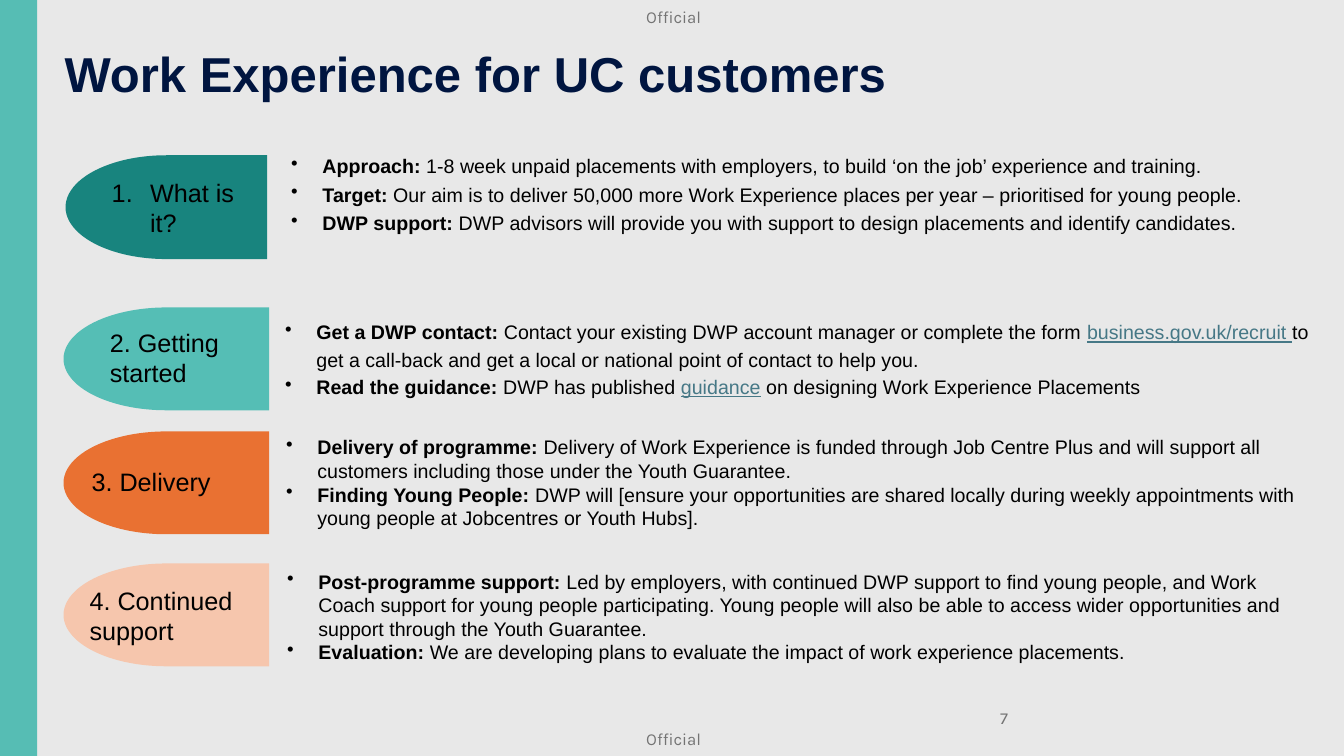
from lxml.etree import SubElement
from pptx import Presentation
from pptx.dml.color import RGBColor
from pptx.enum.shapes import MSO_SHAPE
from pptx.enum.text import MSO_ANCHOR, MSO_AUTO_SIZE, PP_ALIGN
from pptx.oxml.ns import qn
from pptx.util import Inches, Pt

WIDTH, HEIGHT = 13.33, 7.5
TEAL, BLACK, LINK = "56BDB4", "000000", "467886"

TOPICS = [
    {
        "pill": (0.65, 1.54, 2, 1.03), "color": "18847E", "label": "What is it?",
        "label_box": (0.36, 0.17, 1.61, 0.71), "numbered": True,
        "bullet_box": (2.14, -0.06, 10.31, 1.83), "space_before": 3.5,
        "bullets": [
            ("Approach: ", "1-8 week unpaid placements with employers, to build ‘on the job’ "
             "experience and training."),
            ("Target: ", "Our aim is to deliver 50,000 more Work Experience places per year – "
             "prioritised for young people."),
            ("DWP support: ", "DWP advisors will provide you with support to design placements "
             "and identify candidates."),
        ],
    },
    {
        "pill": (0.63, 3.05, 2.04, 1.02), "color": "55BEB5", "label": "2. Getting started",
        "label_box": (0.36, 0.15, 1.61, 0.71),
        "bullet_box": (2.1, 0.04, 10.36, 0.93), "line_spacing": 19.5,
        "bullets": [
            ("Get a DWP contact: ", "Contact your existing DWP account manager or complete the "
             "form |business.gov.uk/recruit |to get a call-back and get a local or national "
             "point of contact to help you."),
            ("Read the guidance: ", "DWP has published |guidance| on designing Work Experience "
             "Placements"),
        ],
    },
    {
        "pill": (0.63, 4.28, 2.04, 1.02), "color": "E97132", "label": "3. Delivery",
        "label_box": (0.18, 0.3, 2, 0.4),
        "bullet_box": (2.11, -0.01, 10.36, 1.04),
        "bullets": [
            ("Delivery of programme: ", "Delivery of Work Experience is funded through Job "
             "Centre Plus and will support all customers including those under the Youth "
             "Guarantee."),
            ("Finding Young People: ", "DWP will [ensure your opportunities are shared locally "
             "during weekly appointments with young people at Jobcentres or Youth Hubs]."),
        ],
    },
    {
        "pill": (0.63, 5.59, 2.04, 1.02), "color": "F6C6AD", "label": "4. Continued support",
        "label_box": (0.16, 0.17, 2, 0.71),
        "bullet_box": (2.12, 0.01, 10.16, 1.04),
        "bullets": [
            ("Post-programme support: ", "Led by employers, with continued DWP support to find "
             "young people, and Work Coach support for young people participating. Young people "
             "will also be able to access wider opportunities and support through the Youth "
             "Guarantee."),
            ("Evaluation: ", "We are developing plans to evaluate the impact of work experience "
             "placements."),
        ],
    },
]


def rgb(color):
    """Turn a hex string into a colour."""
    return RGBColor.from_string(color)


def set_font(font, size, color, name="Arial", bold=False):
    """Format a font."""
    font.size, font.name, font.bold = Pt(size), name, bold
    font.color.rgb = rgb(color)


def add_bullet(paragraph, indent, tag, **attributes):
    """Give a paragraph a hanging bullet or number."""
    properties = paragraph._p.get_or_add_pPr()
    properties.set("marL", str(Inches(indent)))
    properties.set("indent", str(-Inches(indent)))
    SubElement(properties, qn(tag), attributes)


def add_filled_shape(slide, kind, box, color):
    """Draw a plain shape without an outline."""
    shape = slide.shapes.add_shape(kind, *map(Inches, box))
    shape.shadow.inherit = False
    shape.fill.solid()
    shape.fill.fore_color.rgb = rgb(color)
    shape.line.fill.background()
    return shape


def add_text_frame(slide, box, wrap=True):
    """Add a text box and return its frame."""
    frame = slide.shapes.add_textbox(*map(Inches, box)).text_frame
    frame.word_wrap = wrap
    return frame


def add_title(slide, box, text):
    """Place and format the title placeholder."""
    title = slide.shapes.title
    title.left, title.top, title.width, title.height = map(Inches, box)
    frame = title.text_frame
    frame.text = text
    frame.auto_size = MSO_AUTO_SIZE.NONE
    frame.vertical_anchor = MSO_ANCHOR.TOP
    paragraph = frame.paragraphs[0]
    paragraph.alignment = PP_ALIGN.LEFT
    set_font(paragraph.font, 35, "001540", bold=True)


def add_marking(slide, box, text, color):
    """Add a small page marking without margins."""
    frame = add_text_frame(slide, box, wrap=False)
    frame.margin_left = frame.margin_right = frame.margin_top = frame.margin_bottom = 0
    paragraph = frame.paragraphs[0]
    paragraph.text = text
    set_font(paragraph.font, 12, color, "Karla")


def add_bullets(slide, box, topic):
    """List bold headings with their explanations."""
    frame = add_text_frame(slide, box)
    for index, (heading, body) in enumerate(topic["bullets"]):
        paragraph = frame.add_paragraph() if index else frame.paragraphs[0]
        if index and "space_before" in topic:
            paragraph.space_before = Pt(topic["space_before"])
        if "line_spacing" in topic:
            paragraph.line_spacing = Pt(topic["line_spacing"])
        add_bullet(paragraph, 0.31, "a:buChar", char="•")
        set_font(paragraph.font, 14, BLACK)
        run = paragraph.add_run()
        run.text = heading
        run.font.bold = True
        for position, part in enumerate(body.split("|")):
            run = paragraph.add_run()
            run.text = part
            if position % 2:
                run.font.underline = True
                run.font.color.rgb = rgb(LINK)


def add_topic(slide, topic):
    """Draw a topic's pill, label and bullets relative to the pill."""
    left, top = topic["pill"][:2]

    def inside(box):
        """Shift a box by the pill's corner."""
        return left + box[0], top + box[1], box[2], box[3]

    pill = add_filled_shape(slide, MSO_SHAPE.FLOWCHART_DELAY, topic["pill"], topic["color"])
    pill.rotation = 180
    paragraph = add_text_frame(slide, inside(topic["label_box"])).paragraphs[0]
    paragraph.text = topic["label"]
    if topic.get("numbered"):
        add_bullet(paragraph, 0.38, "a:buAutoNum", type="arabicPeriod")
    set_font(paragraph.font, 18, BLACK)
    add_bullets(slide, inside(topic["bullet_box"]), topic)


def main():
    """Build and save the slide."""
    presentation = Presentation()
    presentation.slide_width, presentation.slide_height = Inches(WIDTH), Inches(HEIGHT)
    slide = presentation.slides.add_slide(presentation.slide_layouts[5])
    slide.background.fill.solid()
    slide.background.fill.fore_color.rgb = rgb("E8E8E8")
    add_filled_shape(slide, MSO_SHAPE.RECTANGLE, (0, 0, 0.37, HEIGHT), TEAL)
    add_title(slide, (0.54, 0.38, 12.57, 0.71), "Work Experience for UC customers")
    for top in (0.07, 7.23):
        add_marking(slide, (6.41, top, 0.56, 0.2), "Official", "747474")
    add_marking(slide, (9.92, 7.02, 0.2, 0.2), "7", "757575")
    for topic in TOPICS:
        add_topic(slide, topic)
    presentation.save("out.pptx")


if __name__ == "__main__":
    main()
